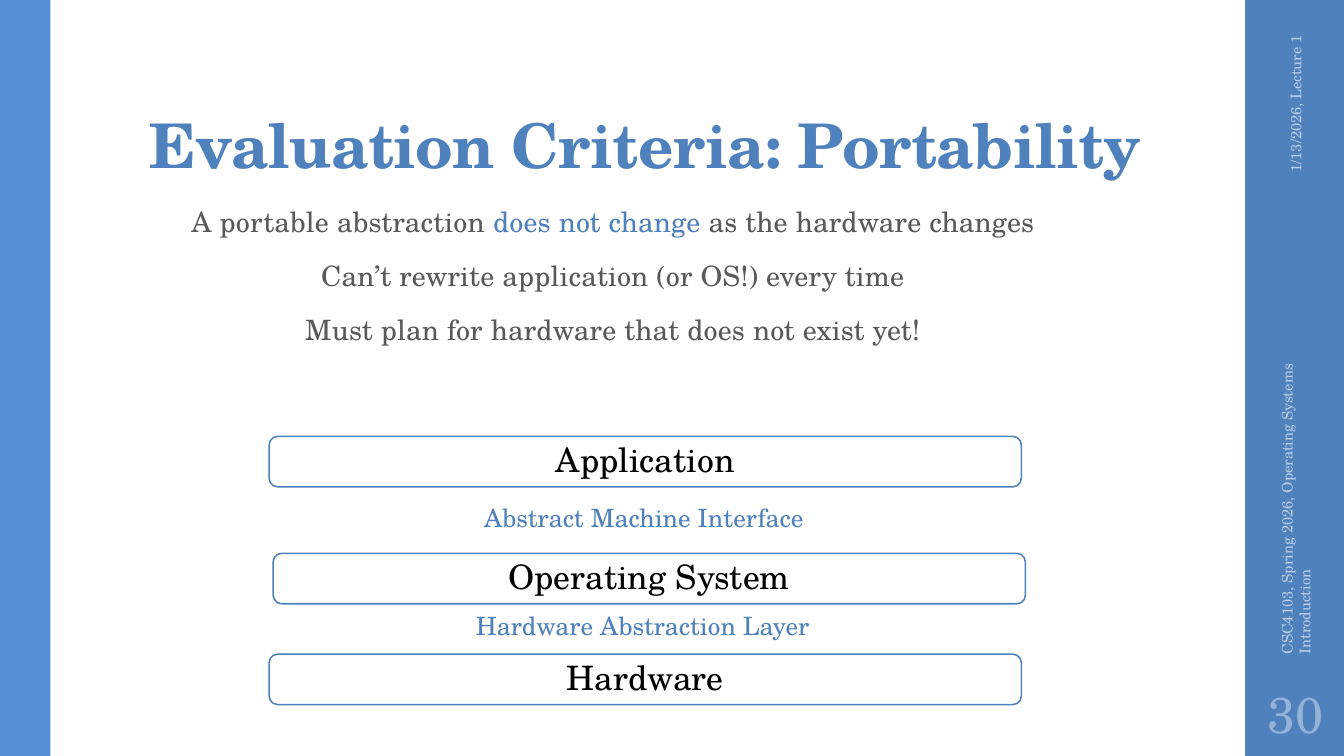
"""Build the slide on portability as an evaluation criterion."""
from dataclasses import dataclass

import pptx
import pptx.dml.color
import pptx.enum.shapes
import pptx.enum.text
import pptx.oxml.ns
import pptx.util

Inches = pptx.util.Inches
Pt = pptx.util.Pt
Align = pptx.enum.text.PP_ALIGN
Anchor = pptx.enum.text.MSO_ANCHOR
Shape = pptx.enum.shapes.MSO_SHAPE

FONT = "TeX Gyre Schola"
BLUE = "4F81BD"
GREY = "595959"
PALE = "B9CDE5"


@dataclass
class Label:
    text: str
    left: float
    top: float
    width: float
    height: float
    size: float
    color: str
    align: Align = Align.CENTER
    anchor: Anchor = Anchor.MIDDLE
    rotation: float = 0
    inset: float = 0.1


@dataclass
class Layer:
    text: str
    left: float
    top: float


LABELS = [
    Label("1/13/2026, Lecture 1", 11.81, 1.09, 2.08, 0.4, 10.5, PALE, Align.RIGHT, rotation=270),
    Label("CSC4103, Spring 2026, Operating Systems Introduction",
          10.89, 4.43, 3.92, 0.4, 10.5, PALE, Align.LEFT, rotation=270),
    Label("30", 12.35, 6.75, 1, 0.65, 36, "95B3D7", inset=0.05),
    Label("Abstract Machine Interface", 1.76, 4.93, 9.25, 0.4, 18, BLUE, anchor=Anchor.TOP),
    Label("Hardware Abstraction Layer", 1.75, 6.01, 9.25, 0.4, 18, BLUE, anchor=Anchor.TOP),
]
LAYERS = [
    Layer("Application", 2.67, 4.33),
    Layer("Operating System", 2.71, 5.49),
    Layer("Hardware", 2.67, 6.49),
]
POINTS = [
    [("A portable abstraction ", GREY), ("does not change ", BLUE), ("as the hardware changes", GREY)],
    [("Can’t rewrite application (or OS!) every time", GREY)],
    [("Must plan for hardware that does not exist yet!", GREY)],
]


def rgb(color: str) -> pptx.dml.color.RGBColor:
    return pptx.dml.color.RGBColor.from_string(color)


def set_font(p, size: float, color: str, spacing: int = 0) -> None:
    p.font.name = FONT
    p.font.size = Pt(size)
    p.font.color.rgb = rgb(color)
    if spacing:
        p._p.pPr.find(pptx.oxml.ns.qn("a:defRPr")).set("spc", str(spacing))


def add_box(slide, kind: Shape, left: float, top: float, width: float, height: float, fill: str):
    sp = slide.shapes.add_shape(kind, Inches(left), Inches(top), Inches(width), Inches(height))
    sp.shadow.inherit = False
    sp.fill.solid()
    sp.fill.fore_color.rgb = rgb(fill)
    sp.line.fill.background()
    return sp


def add_title(slide, text: str) -> None:
    sp = slide.shapes.title
    sp.left, sp.top, sp.width, sp.height = Inches(1.38), Inches(0.32), Inches(10.6), Inches(1.53)
    tf = sp.text_frame
    tf.text = text
    tf.auto_size = pptx.enum.text.MSO_AUTO_SIZE.NONE
    tf.vertical_anchor = Anchor.BOTTOM
    tf.margin_top = Inches(0.03)
    p = tf.paragraphs[0]
    p.alignment = Align.LEFT
    p.line_spacing = 0.9
    set_font(p, 44, BLUE, -50)
    p.font.bold = True


def add_points(slide) -> None:
    tf = slide.shapes.add_textbox(Inches(1.38), Inches(2), Inches(9.4), Inches(4.76)).text_frame
    tf.word_wrap = True
    for i, parts in enumerate(POINTS):
        p = tf.add_paragraph() if i else tf.paragraphs[0]
        p.alignment = Align.CENTER
        p.line_spacing = 0.95
        p.space_before, p.space_after = Pt(14), Pt(2)
        set_font(p, 20, GREY, 10)
        for text, color in parts:
            r = p.add_run()
            r.text = text
            r.font.color.rgb = rgb(color)


def add_label(slide, label: Label) -> None:
    sp = slide.shapes.add_textbox(
        Inches(label.left), Inches(label.top), Inches(label.width), Inches(label.height))
    sp.rotation = label.rotation
    tf = sp.text_frame
    tf.word_wrap = True
    tf.vertical_anchor = label.anchor
    tf.margin_left = tf.margin_right = Inches(label.inset)
    p = tf.paragraphs[0]
    p.text = label.text
    p.alignment = label.align
    set_font(p, label.size, label.color)


def add_layer(slide, layer: Layer) -> None:
    sp = add_box(slide, Shape.ROUNDED_RECTANGLE, layer.left, layer.top, 7.46, 0.5, "FFFFFF")
    sp.line.color.rgb = rgb(BLUE)
    sp.line.width = Pt(1.1)
    tf = sp.text_frame
    tf.vertical_anchor = Anchor.MIDDLE
    p = tf.paragraphs[0]
    p.text = layer.text
    p.alignment = Align.CENTER
    p.line_spacing = 0.9
    set_font(p, 24, "000000")


def main() -> None:
    prs = pptx.Presentation()
    prs.slide_width, prs.slide_height = Inches(13.33), Inches(7.5)
    slide = prs.slides.add_slide(prs.slide_layouts.get_by_name("Title Only"))
    add_box(slide, Shape.RECTANGLE, 12.35, 0, 0.98, 7.5, BLUE)
    add_box(slide, Shape.RECTANGLE, 0, 0, 0.5, 7.5, "558ED5")
    add_title(slide, "Evaluation Criteria: Portability")
    add_points(slide)
    for label in LABELS:
        add_label(slide, label)
    for layer in LAYERS:
        add_layer(slide, layer)
    prs.save("out.pptx")


if __name__ == "__main__":
    main()
